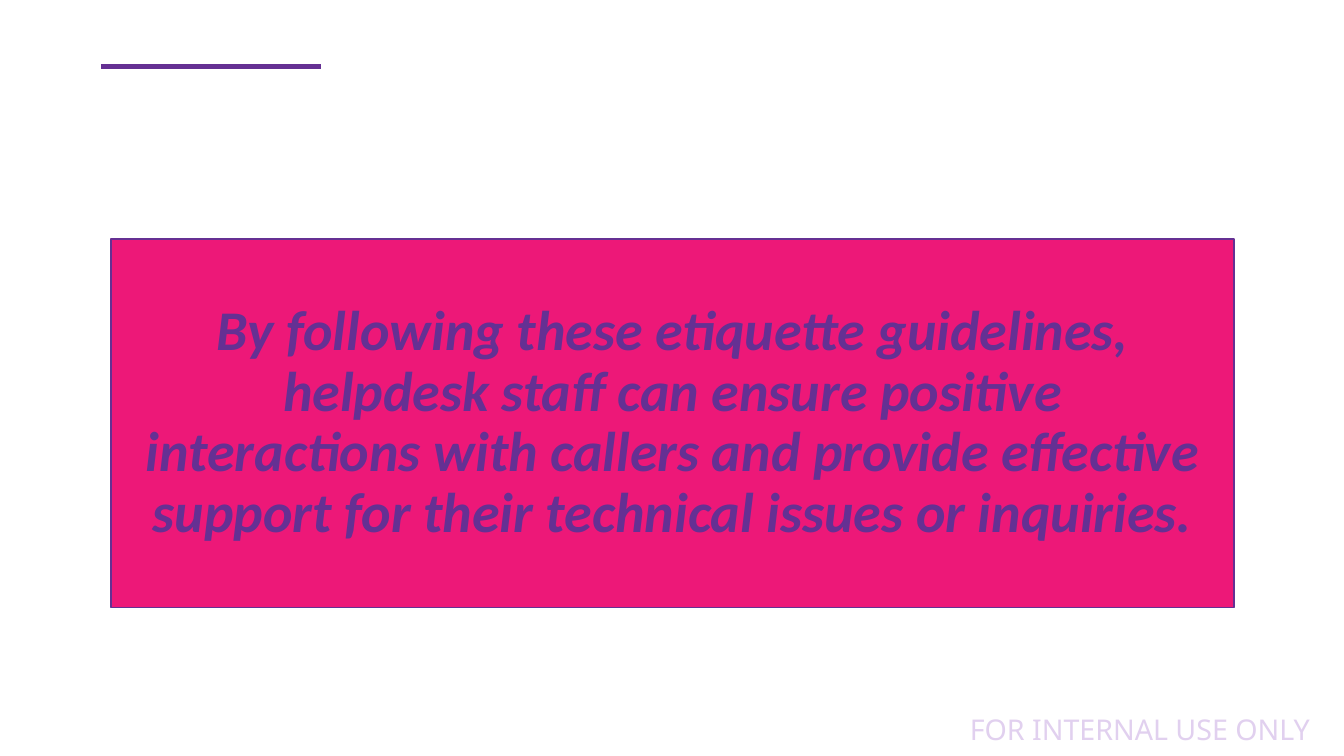
from dataclasses import dataclass

from lxml.etree import SubElement
from pptx import Presentation
from pptx.dml.color import RGBColor as Rgb
from pptx.enum.shapes import MSO_CONNECTOR as Link, MSO_SHAPE as Shape
from pptx.enum.text import MSO_ANCHOR as Anchor, PP_ALIGN as Align
from pptx.oxml.ns import qn
from pptx.util import Inches, Pt


@dataclass(frozen=True)
class Theme:
    purple: str = "653093"
    pink: str = "ED1878"
    pale: str = "E1D0EF"
    body: str = "Calibri"
    label: str = "Noto Sans"
    big: float = 40
    small: float = 20.4
    rule: float = 3
    edge: float = 1


def write(frame, text, font, size, color, bold=False, italic=False,
          align=Align.LEFT, anchor=Anchor.TOP, space=1.0, pad=(0.1, 0.05)):
    frame.word_wrap = True
    frame.vertical_anchor = anchor
    frame.margin_left = frame.margin_right = Inches(pad[0])
    frame.margin_top = frame.margin_bottom = Inches(pad[1])
    para = frame.paragraphs[0]
    para.alignment = align
    para.line_spacing = space
    run = para.add_run()
    run.text = text
    run.font.name = font
    run.font.size = Pt(size)
    run.font.bold = bold
    run.font.italic = italic
    run.font.color.rgb = Rgb.from_string(color)


class Page:
    def __init__(self, deck, theme):
        self.wide, self.high = deck.slide_width, deck.slide_height
        self.theme = theme
        self.slide = deck.slides.add_slide(deck.slide_layouts[6])

    def area(self, left, top, width, height):
        return [round(share * size / 100) for share, size in
                zip((left, top, width, height), (self.wide, self.high) * 2)]

    def rule(self, left, top, right):
        ends = self.area(left, top, right, top)
        line = self.slide.shapes.add_connector(Link.STRAIGHT, *ends)
        line.line.color.rgb = Rgb.from_string(self.theme.purple)
        line.line.width = Pt(self.theme.rule)
        SubElement(line._element.spPr, qn("a:effectLst"))

    def panel(self, area, text, **style):
        box = self.slide.shapes.add_shape(Shape.RECTANGLE, *self.area(*area))
        box.shadow.inherit = False
        box.fill.solid()
        box.fill.fore_color.rgb = Rgb.from_string(self.theme.pink)
        box.line.color.rgb = Rgb.from_string(self.theme.purple)
        box.line.width = Pt(self.theme.edge)
        write(box.text_frame, text, **style)

    def label(self, area, text, **style):
        box = self.slide.shapes.add_textbox(*self.area(*area))
        write(box.text_frame, text, **style)


def main():
    deck = Presentation()
    deck.slide_width, deck.slide_height = Inches(13.33), Inches(7.5)
    theme = Theme()
    page = Page(deck, theme)
    page.rule(7.5, 8.8, 23.86)
    page.label((71.42, 94.4, 26.86, 5.6), "FOR INTERNAL USE ONLY",
               font=theme.label, size=theme.small, color=theme.pale, space=0.8)
    page.panel((8.25, 31.6, 83.57, 48.8),
               "By following these etiquette guidelines, helpdesk staff can "
               "ensure positive interactions with callers and provide effective "
               "support for their technical issues or inquiries.",
               font=theme.body, size=theme.big, color=theme.purple,
               bold=True, italic=True, align=Align.CENTER,
               anchor=Anchor.MIDDLE, space=0.9, pad=(0.31, 0.31))
    deck.save("out.pptx")


if __name__ == "__main__":
    main()
